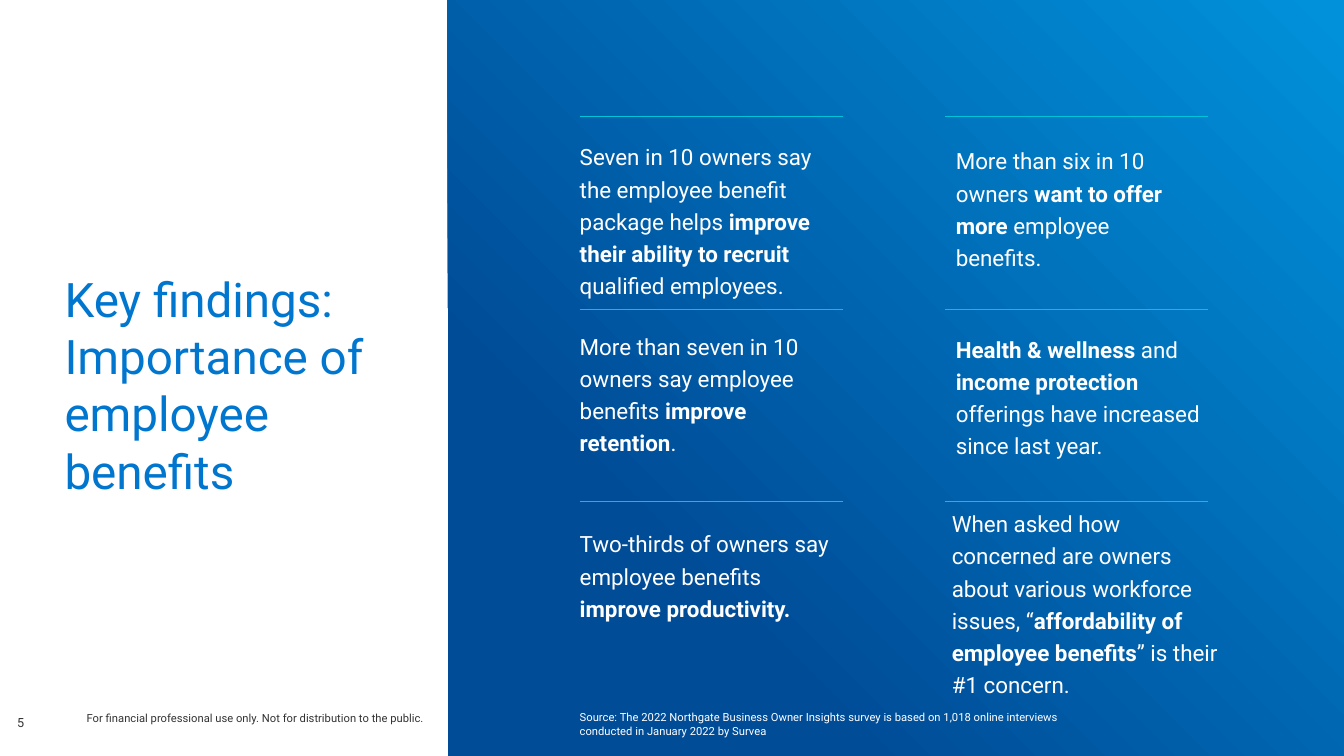
from pptx import Presentation, util as u
from pptx.dml.color import RGBColor
from pptx.enum import shapes, text
from pptx.oxml import parse_xml
from pptx.oxml.ns import nsdecls

THEME = {
    "font": "Roboto",
    "title": RGBColor.from_string("0076CF"),
    "dark": RGBColor.from_string("004C97"),
    "light": RGBColor.from_string("0091DA"),
    "rule": RGBColor.from_string("00C4D9"),
    "white": RGBColor.from_string("FFFFFF"),
    "grey": RGBColor.from_string("333333"),
    "title_size": 34,
    "body_size": 16,
    "number_size": 9,
    "note_size": 8,
}

prs = Presentation()
prs.slide_width, prs.slide_height = u.Inches(13.33), u.Inches(7.5)
s = prs.slides.add_slide(prs.slide_layouts[5])


def write(sp, content, size, color, spacing=1.0, anchor=text.MSO_ANCHOR.TOP):
    tf = sp.text_frame
    tf.word_wrap = True
    tf.auto_size = text.MSO_AUTO_SIZE.NONE
    tf.vertical_anchor = anchor
    tf.margin_left = tf.margin_right = tf.margin_top = tf.margin_bottom = 0
    p = tf.paragraphs[0]
    p.alignment = text.PP_ALIGN.LEFT
    p.line_spacing = spacing
    p.font.name = THEME["font"]
    p.font.size = u.Pt(size)
    p.font.color.rgb = color
    if "**" not in content:
        p.text = content
        return
    for i, part in enumerate(content.split("**")):
        if part:
            r = p.add_run()
            r.text = part
            r.font.bold = i % 2 == 1


def add_text(left, top, width, height, *args, **kwargs):
    box = s.shapes.add_textbox(*map(u.Inches, (left, top, width, height)))
    write(box, *args, **kwargs)


panel = s.shapes.add_shape(
    shapes.MSO_SHAPE.RECTANGLE, *map(u.Inches, (4.44, 0, 8.89, 7.5))
)
panel.shadow.inherit = False
panel.line.fill.background()
panel.fill.gradient()
panel.fill.gradient_angle = 45
for stop, (position, color) in zip(
    panel.fill.gradient_stops, [(0.25, THEME["dark"]), (0.99, THEME["light"])]
):
    stop.position = position
    stop.color.rgb = color

title = s.shapes.title
title.left, title.top, title.width, title.height = map(
    u.Inches, (0.64, 2.68, 3.3, 2.54)
)
write(title, "Key findings: Importance of employee\vbenefits",
      THEME["title_size"], THEME["title"])

COLUMN_LEFT, COLUMN_PITCH, RULE_WIDTH = 5.75, 3.62, 2.61
ROW_TOP, ROW_PITCH = 1.16, 1.91

findings = [
    [
        (0, 0.21, 2.61, "Seven in 10 owners say the employee benefit package helps "
         "**improve their ability to recruit **qualified employees."),
        (0.11, 0.25, 2.4, "More than six in 10 owners **want to offer more **"
         "employee benefits."),
    ],
    [
        (0, 0.18, 2.61, "More than seven in 10 owners say employee benefits "
         "**improve retention**."),
        (0.11, 0.21, 2.47, "**Health & wellness **and **income protection **"
         "offerings have increased since last year."),
    ],
    [
        (0, 0.23, 2.61, "Two-thirds of owners say employee benefits "
         "**improve productivity.**"),
        (0.07, 0.03, 2.69, "When asked how concerned are owners about various "
         "workforce issues, “**affordability of employee benefits**” is their "
         "#1 concern."),
    ],
]

for row, cells in enumerate(findings):
    top = ROW_TOP + row * ROW_PITCH
    for column, (dx, dy, width, finding) in enumerate(cells):
        left = COLUMN_LEFT + column * COLUMN_PITCH
        rule = s.shapes.add_connector(
            shapes.MSO_CONNECTOR.STRAIGHT,
            *map(u.Inches, (left, top, left + RULE_WIDTH, top)),
        )
        rule.line.color.rgb = THEME["rule"]
        rule.line.width = u.Pt(0.75)
        rule._element.spPr.append(parse_xml(f"<a:effectLst {nsdecls('a')}/>"))
        add_text(left + dx, top + dy, width, ROW_PITCH - dy, finding,
                 THEME["body_size"], THEME["white"], spacing=1.2)

add_text(0.17, 6.83, 0.46, 0.41, "5", THEME["number_size"], THEME["grey"],
         anchor=text.MSO_ANCHOR.BOTTOM)
add_text(0.86, 7.06, 6.47, 0.14,
         "For financial professional use only. Not for distribution to the public.",
         THEME["note_size"], THEME["grey"])
add_text(COLUMN_LEFT, 7.05, 5.17, 0.27,
         "Source: The 2022 Northgate Business Owner Insights survey is based on "
         "1,018 online interviews conducted in January 2022 by Survea",
         THEME["note_size"], THEME["white"])

prs.save("out.pptx")
